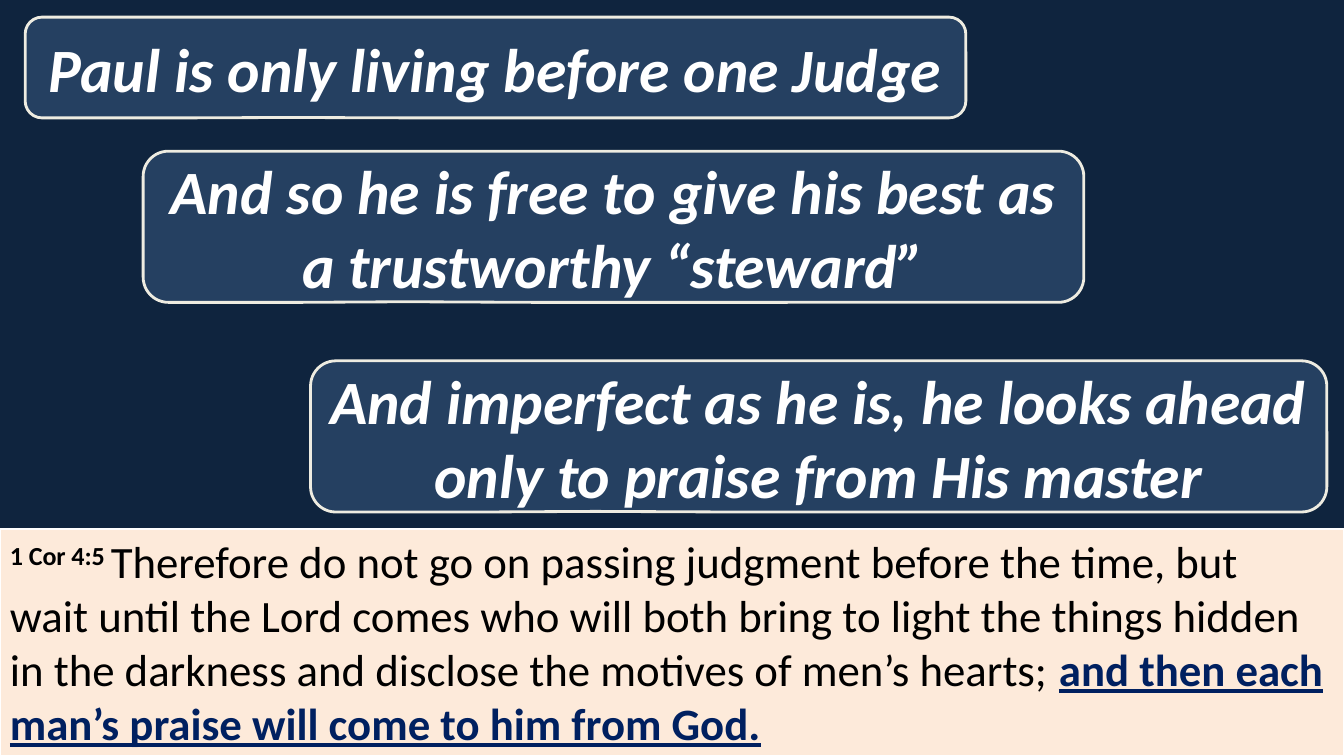
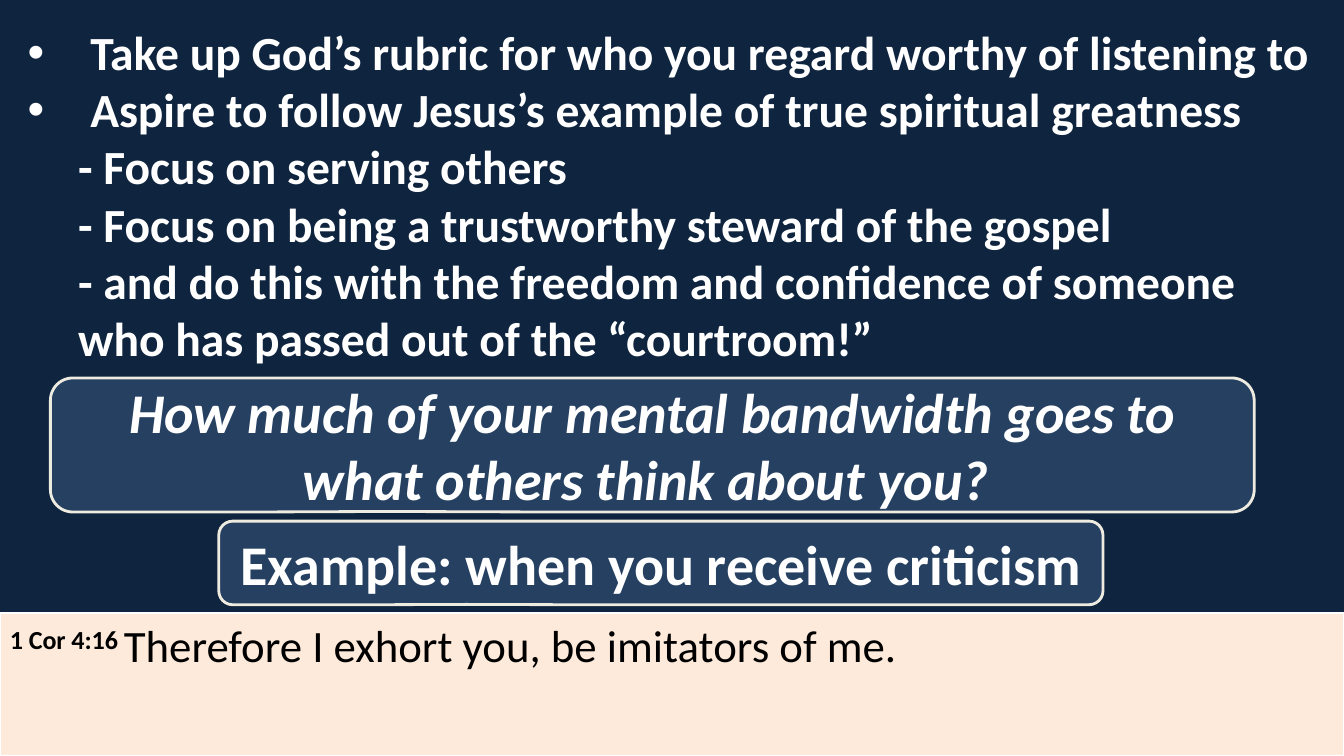
from dataclasses import dataclass

from lxml import etree
from pptx import Presentation
from pptx.dml.color import RGBColor
from pptx.enum.shapes import MSO_SHAPE
from pptx.enum.text import MSO_ANCHOR, MSO_AUTO_SIZE, PP_ALIGN
from pptx.oxml.ns import qn
from pptx.util import Inches, Pt


@dataclass(frozen=True)
class Theme:
    font: str = "Calibri"
    night: RGBColor = RGBColor(0x0F, 0x24, 0x3E)
    panel: RGBColor = RGBColor(0x25, 0x40, 0x61)
    cream: RGBColor = RGBColor(0xEE, 0xEC, 0xE1)
    peach: RGBColor = RGBColor(0xFD, 0xEA, 0xDA)
    navy: RGBColor = RGBColor(0x00, 0x20, 0x60)
    white: RGBColor = RGBColor(0xFF, 0xFF, 0xFF)
    black: RGBColor = RGBColor(0, 0, 0)
    claim_size: int = 44
    question_size: int = 40
    list_size: int = 34
    verse_size: int = 32


THEME = Theme()
SLIDE_WIDTH, SLIDE_HEIGHT = 13.33, 7.5
CALLOUT_TAIL = (-0.22, 0.496, 0.167)
NBSP = chr(160)


def style_font(font, size, color, bold=False, italic=False):
    font.name = THEME.font
    font.size = Pt(size)
    font.color.rgb = color
    font.bold = bold
    font.italic = italic


def add_panel(slide, preset, box, fill, line, line_width):
    panel = slide.shapes.add_shape(preset, *map(Inches, box))
    panel.shadow.inherit = False
    panel.fill.solid()
    panel.fill.fore_color.rgb = fill
    panel.line.color.rgb = line
    panel.line.width = Pt(line_width)
    panel.text_frame.word_wrap = True
    return panel


def add_callout(slide, box, text, size, italic=True):
    callout = add_panel(slide, MSO_SHAPE.ROUNDED_RECTANGULAR_CALLOUT, box,
                        THEME.panel, THEME.cream, 2)
    for index, value in enumerate(CALLOUT_TAIL):
        callout.adjustments[index] = value
    callout.text_frame.vertical_anchor = MSO_ANCHOR.MIDDLE
    statement = callout.text_frame.paragraphs[0]
    statement.text = text
    statement.alignment = PP_ALIGN.CENTER
    style_font(statement.font, size, THEME.white, bold=True, italic=italic)


def add_verse_band(slide, top, reference, verse, emphasis=""):
    band = add_panel(slide, MSO_SHAPE.RECTANGLE,
                     (0, top, SLIDE_WIDTH, SLIDE_HEIGHT - top),
                     THEME.peach, THEME.white, 1.5)
    band.text_frame.vertical_anchor = MSO_ANCHOR.TOP
    passage = band.text_frame.paragraphs[0]
    passage.alignment = PP_ALIGN.LEFT

    citation = passage.add_run()
    citation.text = reference + NBSP
    style_font(citation.font, THEME.verse_size, THEME.black, bold=True)
    citation._r.get_or_add_rPr().set("baseline", "30000")

    wording = passage.add_run()
    wording.text = verse
    style_font(wording.font, THEME.verse_size, THEME.black)

    if emphasis:
        promise = passage.add_run()
        promise.text = emphasis
        style_font(promise.font, THEME.verse_size, THEME.navy, bold=True)
        promise.font.underline = True


def set_bullet(paragraph, bullet, margin, indent):
    properties = paragraph._p.get_or_add_pPr()
    properties.set("marL", str(Inches(margin)))
    properties.set("indent", str(Inches(indent)))
    if bullet:
        typeface = etree.Element(qn("a:buFont"), typeface="Arial")
        mark = etree.Element(qn("a:buChar"), char=bullet)
        marks = [typeface, mark]
    else:
        marks = [etree.Element(qn("a:buNone"))]
    defaults = properties.find(qn("a:defRPr"))
    for element in marks:
        defaults.addprevious(element)


def fill_applications(body, box, applications):
    body.left, body.top, body.width, body.height = map(Inches, box)
    frame = body.text_frame
    frame.auto_size = MSO_AUTO_SIZE.NONE
    frame.word_wrap = True
    frame.vertical_anchor = MSO_ANCHOR.TOP
    frame.margin_left = frame.margin_right = Inches(0.275)
    frame.margin_top = frame.margin_bottom = Inches(0.23)
    for index, (level, text) in enumerate(applications):
        point = frame.paragraphs[0] if index == 0 else frame.add_paragraph()
        point.text = text
        point.level = level
        point.space_before = Pt(0)
        style_font(point.font, THEME.list_size, THEME.white, bold=True)
        if level:
            set_bullet(point, None, 0.5, 0)
        else:
            set_bullet(point, "•", 0.62, -0.62)


def build_judge_slide(prs):
    slide = prs.slides.add_slide(prs.slide_layouts[6])
    add_verse_band(
        slide, 5.25, "1 Cor 4:5",
        f"Therefore do not go on passing judgment before the time, but "
        f"wait{NBSP}until the Lord comes who will both bring to light the "
        f"things hidden in the darkness and disclose the motives of "
        f"men’s{NBSP}hearts; ",
        f"and then each man’s{NBSP}praise will come to him from God.")
    claims = [
        ((0.25, 0.17, 9.33, 1), "Paul is only living before one Judge"),
        ((1.42, 1.5, 9.33, 1.5),
         "And so he is free to give his best as a trustworthy “steward”"),
        ((3.08, 3.58, 10.08, 1.5),
         "And imperfect as he is, he looks ahead only to praise from His master"),
    ]
    for box, claim in claims:
        add_callout(slide, box, claim, THEME.claim_size)


def build_application_slide(prs):
    slide = prs.slides.add_slide(prs.slide_layouts[1])
    unused_title = slide.shapes.title._element
    unused_title.getparent().remove(unused_title)
    fill_applications(slide.placeholders[1], (0, 0, SLIDE_WIDTH, 3.58), [
        (0, "Take up God’s rubric for who you regard worthy of listening to"),
        (0, "Aspire to follow Jesus’s example of true spiritual greatness"),
        (1, "- Focus on serving others"),
        (1, "- Focus on being a trustworthy steward of the gospel"),
        (1, "- and do this with the freedom and confidence of someone "
            "who has passed out of the “courtroom!”"),
    ])
    add_verse_band(slide, 6.08, "1 Cor 4:16",
                   "Therefore I exhort you, be imitators of me.")
    add_callout(slide, (0.5, 3.75, 11.94, 1.33),
                "How much of your mental bandwidth goes to what others "
                "think about you? ", THEME.question_size)
    add_callout(slide, (2.17, 5.17, 8.77, 0.83),
                "Example: when you receive criticism",
                THEME.question_size, italic=False)


def main():
    prs = Presentation()
    prs.slide_width = Inches(SLIDE_WIDTH)
    prs.slide_height = Inches(SLIDE_HEIGHT)
    backdrop = prs.slide_master.background.fill
    backdrop.solid()
    backdrop.fore_color.rgb = THEME.night
    build_judge_slide(prs)
    build_application_slide(prs)
    prs.save("out.pptx")


if __name__ == "__main__":
    main()
